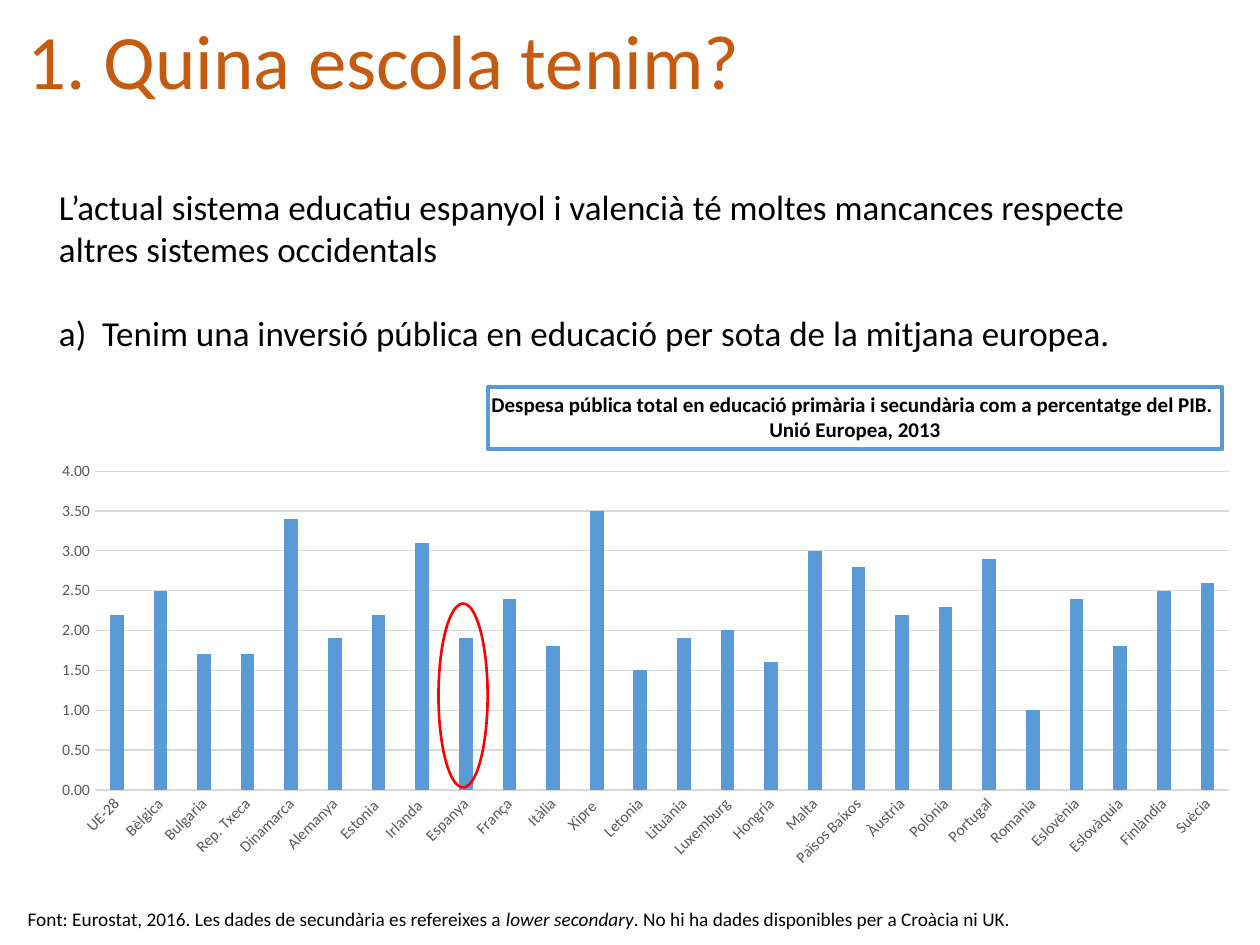
from dataclasses import dataclass

import lxml.etree
import pptx
import pptx.chart.data
import pptx.dml.color
import pptx.enum.chart
import pptx.enum.shapes
import pptx.enum.text
import pptx.oxml.ns
import pptx.util

FONT = "Calibri"
BLACK, ORANGE, BLUE, RED = "000000", "C55A11", "5B9BD5", "FF0000"
AXIS_TEXT, GRID = "595959", "D9D9D9"
Inches = pptx.util.Inches


@dataclass
class Box:
    left: float
    top: float
    width: float
    height: float

    def lengths(self) -> list:
        return [Inches(n) for n in (self.left, self.top, self.width, self.height)]


@dataclass
class TextBlock:
    box: Box
    size: float
    paragraphs: list[list[str]]
    space_before: float = 0
    italic_run: int = -1


TEXT_BLOCKS = [
    TextBlock(Box(0.37, 1.42, 8.76, 1.5), 20, [
        ["L’actual sistema educatiu espanyol i valencià té moltes mancances "
         "respecte altres sistemes occidentals"],
        ["a)  Tenim una inversió pública en educació per sota de la mitjana europea."],
    ], space_before=24),
    TextBlock(Box(0.12, 7.15, 9.88, 0.29), 11, [[
        "Font: Eurostat, 2016. Les dades de secundària es refereixes a ",
        "lower secondary",
        ". No hi ha dades disponibles per a Croàcia ni UK.",
    ]], italic_run=1),
]

SPENDING = {
    "UE-28": 2.2, "Bèlgica": 2.5, "Bulgaria": 1.7, "Rep. Txeca": 1.7,
    "Dinamarca": 3.4, "Alemanya": 1.9, "Estonia ": 2.2, "Irlanda ": 3.1,
    "Espanya": 1.9, "França": 2.4, "Itàlia": 1.8, "Xipre ": 3.5,
    "Letonia": 1.5, "Lituània": 1.9, "Luxemburg": 2, "Hongria": 1.6,
    "Malta": 3, "Països Baixos": 2.8, "Àustria": 2.2, "Polònia": 2.3,
    "Portugal": 2.9, "Romania": 1, "Eslovènia": 2.4, "Eslovàquia": 1.8,
    "Finlàndia": 2.5, "Suècia": 2.6,
}
CHART_TITLE = [
    "Despesa pública total en educació primària i secundària com a percentatge del PIB. ",
    "Unió Europea, 2013",
]


def color(value: str) -> pptx.dml.color.RGBColor:
    return pptx.dml.color.RGBColor.from_string(value)


def style_font(font, size: float, value: str, bold: bool = False) -> None:
    font.name = FONT
    font.size = pptx.util.Pt(size)
    font.bold = bold
    font.color.rgb = color(value)


def style_line(line, value: str, width: float) -> None:
    line.color.rgb = color(value)
    line.width = pptx.util.Pt(width)


def place_title(slide) -> None:
    title = slide.shapes.title
    title.left, title.top, title.width, title.height = Box(0.12, 0.18, 6.47, 1.34).lengths()
    frame = title.text_frame
    frame.text = "1. Quina escola tenim?"
    frame.vertical_anchor = pptx.enum.text.MSO_ANCHOR.TOP
    frame.margin_top = 0
    paragraph = frame.paragraphs[0]
    paragraph.alignment = pptx.enum.text.PP_ALIGN.LEFT
    paragraph.line_spacing = 0.9
    style_font(paragraph.runs[0].font, 44, ORANGE)


def add_text(slide, block: TextBlock) -> None:
    frame = slide.shapes.add_textbox(*block.box.lengths()).text_frame
    frame.word_wrap = True
    for index, texts in enumerate(block.paragraphs):
        paragraph = frame.add_paragraph() if index else frame.paragraphs[0]
        if index:
            paragraph.space_before = pptx.util.Pt(block.space_before)
        for position, text in enumerate(texts):
            run = paragraph.add_run()
            run.text = text
            style_font(run.font, block.size, BLACK)
            run.font.italic = position == block.italic_run


def set_layout(parent, index: int, **values) -> None:
    qn = pptx.oxml.ns.qn
    for old in parent.findall(qn("c:layout")):
        parent.remove(old)
    layout = lxml.etree.Element(qn("c:layout"))
    manual = lxml.etree.SubElement(layout, qn("c:manualLayout"))
    for name, value in values.items():
        lxml.etree.SubElement(manual, qn(f"c:{name}")).set("val", str(value))
    parent.insert(index, layout)


def style_axes(chart) -> None:
    category_axis, value_axis = chart.category_axis, chart.value_axis
    for axis in (category_axis, value_axis):
        axis.major_tick_mark = pptx.enum.chart.XL_TICK_MARK.NONE
        axis.minor_tick_mark = pptx.enum.chart.XL_TICK_MARK.NONE
        style_font(axis.tick_labels.font, 9, AXIS_TEXT)
    style_line(category_axis.format.line, GRID, 0.75)
    body = category_axis._element.find(".//" + pptx.oxml.ns.qn("a:bodyPr"))
    body.set("rot", "-2700000")
    body.set("vert", "horz")
    value_axis.minimum_scale, value_axis.maximum_scale = 0, 4
    value_axis.major_unit = 0.5
    value_axis.format.line.fill.background()
    style_line(value_axis.major_gridlines.format.line, GRID, 0.75)
    value_axis.tick_labels.number_format = "#,##0.00"
    value_axis.tick_labels.number_format_is_linked = False


def style_chart_title(chart) -> None:
    title = chart.chart_title
    frame = title.text_frame
    for index, text in enumerate(CHART_TITLE):
        paragraph = frame.add_paragraph() if index else frame.paragraphs[0]
        run = paragraph.add_run()
        run.text = text
        style_font(run.font, 12, BLACK, bold=True)
    style_line(title.format.line, BLUE, 2.25)
    set_layout(title._element, 1, xMode="edge", yMode="edge", x=0.37, y=0.03)


def add_spending_chart(slide) -> None:
    data = pptx.chart.data.CategoryChartData(number_format="#,##0.00")
    data.categories = list(SPENDING)
    data.add_series("Series 1", list(SPENDING.values()))
    chart = slide.shapes.add_chart(
        pptx.enum.chart.XL_CHART_TYPE.COLUMN_CLUSTERED,
        *Box(0.3, 2.95, 9.65, 4.01).lengths(), data).chart
    style_font(chart.font, 10, BLACK)
    chart.has_legend = False
    style_chart_title(chart)
    style_axes(chart)
    plot = chart.plots[0]
    plot.gap_width, plot.overlap = 219, -27
    plot.vary_by_categories = False
    fill = plot.series[0].format.fill
    fill.solid()
    fill.fore_color.rgb = color(BLUE)
    plot_area = chart._chartSpace.find(".//" + pptx.oxml.ns.qn("c:plotArea"))
    set_layout(plot_area, 0, layoutTarget="inner", xMode="edge", yMode="edge",
               x=0.047, y=0.197, w=0.933, h=0.631)


def add_highlight(slide, box: Box) -> None:
    ellipse = slide.shapes.add_shape(pptx.enum.shapes.MSO_SHAPE.OVAL, *box.lengths())
    ellipse.shadow.inherit = False
    ellipse.fill.background()
    style_line(ellipse.line, RED, 1.5)


def main() -> None:
    presentation = pptx.Presentation()
    presentation.slide_width, presentation.slide_height = Inches(10), Inches(7.5)
    slide = presentation.slides.add_slide(presentation.slide_layouts[5])
    place_title(slide)
    for block in TEXT_BLOCKS:
        add_text(slide, block)
    add_spending_chart(slide)
    add_highlight(slide, Box(3.48, 4.79, 0.39, 1.46))
    presentation.save("out.pptx")


if __name__ == "__main__":
    main()
